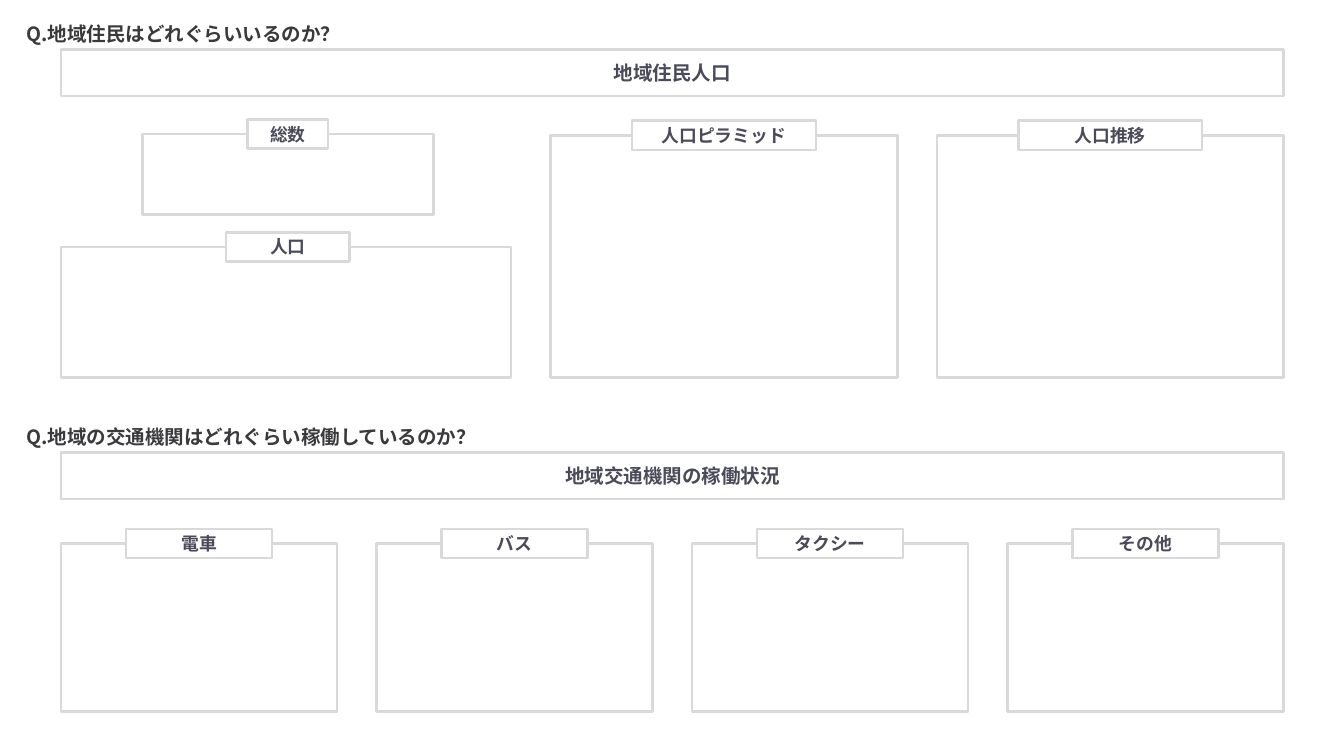
from lxml import etree
from pptx import Presentation
from pptx.dml.color import RGBColor
from pptx.enum import shapes, text
from pptx.oxml.ns import qn
from pptx.util import Cm, Pt

# Content
POPULATION = {
    "question": "Q.地域住民はどれぐらいいるのか？",
    "heading": "地域住民人口",
    "top": 1.37,
}
TRANSIT = {
    "question": "Q.地域の交通機関はどれぐらい稼働しているのか？",
    "heading": "地域交通機関の稼働状況",
    "top": 12.57,
}
TOTAL, RESIDENTS = "総数", "人口"
POPULATION_CHARTS = ["人口ピラミッド", "人口推移"]
TRANSPORT_MODES = ["電車", "バス", "タクシー", "その他"]

# Style
FONT = "Noto Sans CJK JP"
COLORS = {"border": "D9D9D9", "label": "4A4A5A", "question": "3A3A3D", "tab": "FFFFFF"}
HEADING_SIZE, TAB_SIZE = 15.4, 14

# Layout in centimetres
LEFT, WIDTH, GAP = 1.7, 33.96, 1.1
BAND_HEIGHT, TAB_HEIGHT = 1.3, 0.81
POPULATION_BOTTOM = 10.49
CHART_WIDTH = 9.63
RESIDENTS_WIDTH = WIDTH - 2 * (CHART_WIDTH + GAP)
LEFT_TAB_CENTER = 8.0
MODE_WIDTH = (WIDTH - GAP * (len(TRANSPORT_MODES) - 1)) / len(TRANSPORT_MODES)


def rgb(name):
    return RGBColor.from_string(COLORS[name])


def write(shape, words, size, color, align):
    frame = shape.text_frame
    frame.word_wrap = True
    frame.auto_size = text.MSO_AUTO_SIZE.NONE
    frame.vertical_anchor = text.MSO_ANCHOR.MIDDLE
    paragraph = frame.paragraphs[0]
    paragraph.alignment = align
    run = paragraph.add_run()
    run.text = words
    run.font.size, run.font.bold, run.font.name = Pt(size), True, FONT
    run.font.color.rgb = rgb(color)
    east_asian = etree.SubElement(run._r.get_or_add_rPr(), qn("a:ea"))
    east_asian.set("typeface", FONT)


def add_frame(parent, left, top, width, height, fill=None):
    frame = parent.add_shape(shapes.MSO_SHAPE.RECTANGLE,
                             Cm(left), Cm(top), Cm(width), Cm(height))
    frame.shadow.inherit = False
    frame.line.color.rgb = rgb("border")
    frame.line.width = Pt(2)
    if fill:
        frame.fill.solid()
        frame.fill.fore_color.rgb = rgb(fill)
    else:
        frame.fill.background()
    return frame


def add_panel(label, left, top, width, height, tab_width, tab_center=None):
    """A frame with its label tab straddling the top edge."""
    panel = slide.shapes.add_group_shape().shapes
    add_frame(panel, left, top, width, height)
    center = tab_center or left + width / 2
    tab = add_frame(panel, center - tab_width / 2, top - TAB_HEIGHT / 2,
                    tab_width, TAB_HEIGHT, "tab")
    write(tab, label, TAB_SIZE, "label", text.PP_ALIGN.CENTER)


def add_section(section, question):
    question.left, question.top = Cm(0.48), Cm(section["top"] - 1.08)
    question.width, question.height = Cm(16.59), Cm(BAND_HEIGHT)
    write(question, section["question"], HEADING_SIZE, "question", text.PP_ALIGN.LEFT)
    band = add_frame(slide.shapes, LEFT, section["top"], WIDTH, BAND_HEIGHT)
    write(band, section["heading"], HEADING_SIZE, "label", text.PP_ALIGN.CENTER)


prs = Presentation()
prs.slide_width, prs.slide_height = Cm(37.34), Cm(21.01)
slide = prs.slides.add_slide(prs.slide_layouts[5])

# Population section
add_section(POPULATION, slide.shapes.title)
add_panel(TOTAL, 3.96, 3.73, 8.08, 2.24, 2.24, LEFT_TAB_CENTER)
add_panel(RESIDENTS, LEFT, 6.86, RESIDENTS_WIDTH, POPULATION_BOTTOM - 6.86,
          3.43, LEFT_TAB_CENTER)
for column, label in enumerate(POPULATION_CHARTS):
    left = LEFT + RESIDENTS_WIDTH + GAP + column * (CHART_WIDTH + GAP)
    add_panel(label, left, 3.76, CHART_WIDTH, POPULATION_BOTTOM - 3.76, 5.11)

# Transport section
add_section(TRANSIT, slide.shapes.add_textbox(0, 0, 0, 0))
for column, label in enumerate(TRANSPORT_MODES):
    left = LEFT + column * (MODE_WIDTH + GAP)
    add_panel(label, left, 15.11, MODE_WIDTH, 4.67, 4.06)

prs.save("out.pptx")
